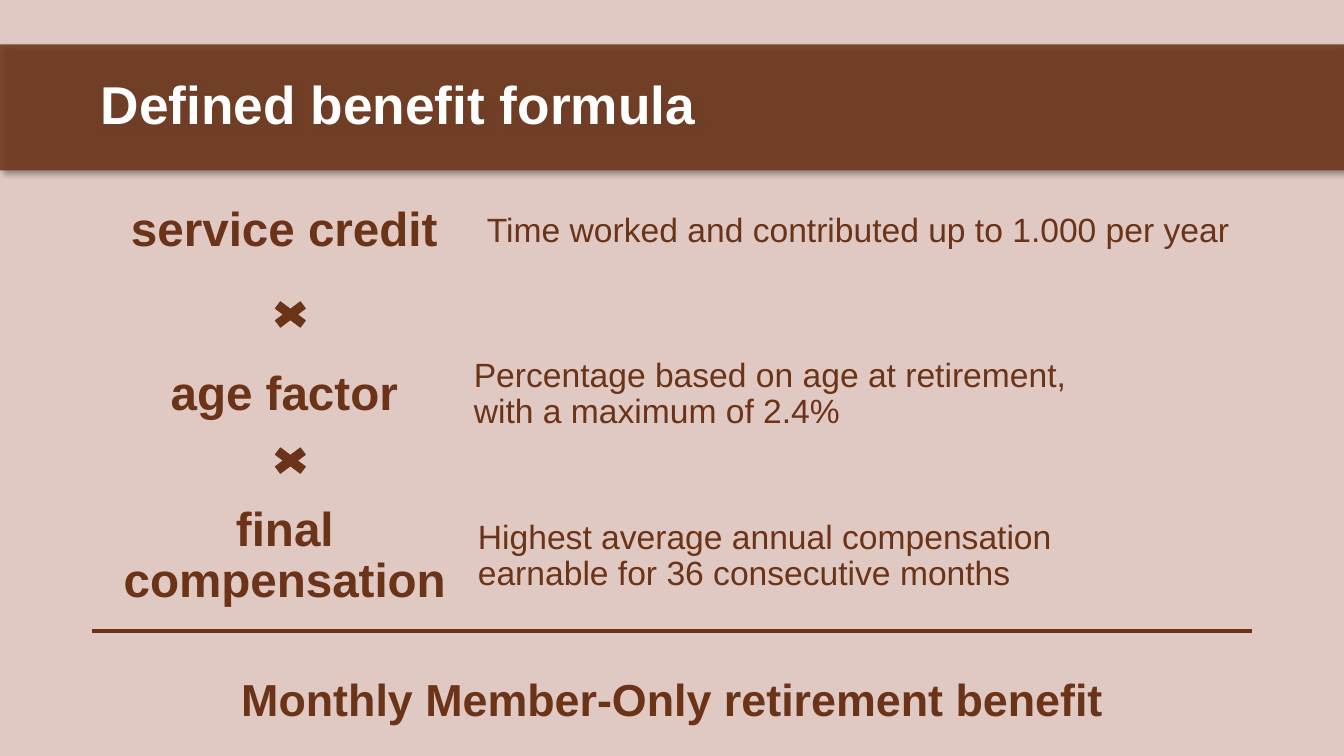
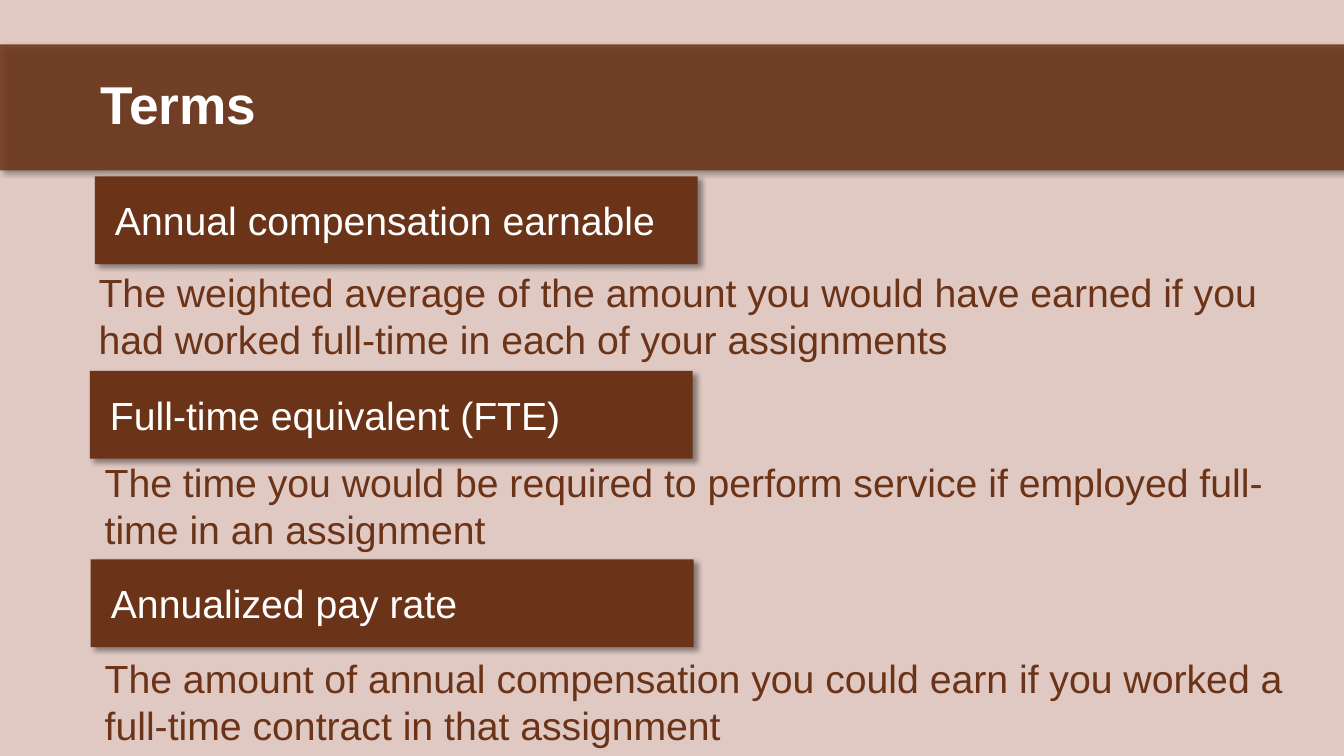
from lxml.etree import SubElement
from pptx import Presentation
from pptx.dml.color import RGBColor
from pptx.enum.shapes import MSO_CONNECTOR, MSO_SHAPE
from pptx.enum.text import MSO_ANCHOR, PP_ALIGN
from pptx.oxml.ns import qn
from pptx.util import Inches, Pt

BROWN = RGBColor(0x6B, 0x33, 0x17)
ROSE = RGBColor(0xE0, 0xC9, 0xC3)
WHITE = RGBColor(0xFF, 0xFF, 0xFF)
FONT = "Arial"
SLIDE_W, SLIDE_H = 13.33, 7.5
BAND = (0, 0.44, SLIDE_W, 1.25)
TERM_INS = (0.2, 0.05, 0.1, 0.05)
FACTOR_INS = (0.14, 0.1, 0.14, 0.1)
MEANING_INS = (0.27, 0.19, 0.32, 0.19)

FACTORS = [
    ("service credit", (1.08, 1.62, 3.48, 1.35),
     "Time worked and contributed up to 1.000 per year", (4.56, 1.76, 8.41, 1.07)),
    ("age factor", (1.08, 3.24, 3.48, 1.35),
     "Percentage based on age at retirement, with a maximum of 2.4%", (4.43, 3.38, 6.96, 1.07)),
    ("final compensation", (1.08, 4.85, 3.49, 1.34),
     "Highest average annual compensation earnable for 36 consecutive months",
     (4.47, 4.93, 7.66, 1.18)),
]
TERMS = [
    ("Annual compensation earnable", (0.94, 1.75),
     "The weighted average of the amount you would have earned if you had worked "
     "full-time in each of your assignments", (0.88, 2.63)),
    ("Full-time equivalent (FTE)", (0.89, 3.68),
     "The time you would be required to perform service if employed full-time "
     "in an assignment", (0.94, 4.51)),
    ("Annualized pay rate", (0.9, 5.55),
     "The amount of annual compensation you could earn if you worked a "
     "full-time contract in that assignment", (0.94, 6.46)),
]


def inches(box):
    """Turn a box of plain numbers into lengths."""
    return [Inches(v) for v in box]


def set_text(sp, text, size, color=BROWN, bold=False, align=PP_ALIGN.LEFT,
             ins=(0.1, 0.05, 0.1, 0.05), spacing=1.0):
    """Write one vertically centred paragraph into a shape."""
    tf = sp.text_frame
    tf.word_wrap = True
    tf.vertical_anchor = MSO_ANCHOR.MIDDLE
    tf.margin_left, tf.margin_top, tf.margin_right, tf.margin_bottom = inches(ins)
    tf.text = text
    p = tf.paragraphs[0]
    p.alignment = align
    p.line_spacing = spacing
    font = p.runs[0].font
    font.name, font.size, font.bold = FONT, Pt(size), bold
    font.color.rgb = color


def add_label(s, box, text, size, **style):
    """Add a text box."""
    set_text(s.shapes.add_textbox(*inches(box)), text, size, **style)


def add_bar(s, box, text, size, alpha=100, **style):
    """Add a brown bar with white text and a soft shadow."""
    sp = s.shapes.add_shape(MSO_SHAPE.RECTANGLE, *inches(box))
    sp.fill.solid()
    sp.fill.fore_color.rgb = BROWN
    sp.line.fill.background()
    sp.shadow.inherit = False
    spPr = sp.fill._xPr
    if alpha < 100:
        color = spPr.find(qn("a:solidFill")).find(qn("a:srgbClr"))
        SubElement(color, qn("a:alpha"), val=str(alpha * 1000))
    shadow = SubElement(spPr.find(qn("a:effectLst")), qn("a:outerShdw"),
                        blurRad=str(Pt(4)), dist=str(Pt(3)), dir="2700000",
                        algn="tl", rotWithShape="0")
    black = SubElement(shadow, qn("a:srgbClr"), val="000000")
    SubElement(black, qn("a:alpha"), val="40000")
    set_text(sp, text, size, color=WHITE, **style)


def add_slide(prs, title):
    """Add a slide with the shared background and title band."""
    s = prs.slides.add_slide(prs.slide_layouts[6])
    s.background.fill.solid()
    s.background.fill.fore_color.rgb = ROSE
    add_bar(s, BAND, title, 38, alpha=85, bold=True, ins=(1, 0.05, 0.1, 0.05), spacing=0.9)
    return s


def add_times_sign(s, box):
    """Add a multiplication sign between two factors."""
    sp = s.shapes.add_shape(MSO_SHAPE.MATH_MULTIPLY, *inches(box))
    sp.fill.solid()
    sp.fill.fore_color.rgb = BROWN
    sp.line.color.rgb = BROWN
    sp.line.width = Pt(0.5)
    sp.shadow.inherit = False


def add_rule(s, left, right, y):
    """Add the horizontal line above the result."""
    line = s.shapes.add_connector(MSO_CONNECTOR.STRAIGHT, *inches((left, y, right, y)))
    line.line.color.rgb = BROWN
    line.line.width = Pt(3)
    SubElement(line._element.spPr, qn("a:effectLst"))


def formula_slide(prs):
    """Build the slide that multiplies three factors."""
    s = add_slide(prs, "Defined benefit formula")
    for factor, factor_box, meaning, meaning_box in FACTORS:
        add_label(s, factor_box, factor, 34, bold=True, align=PP_ALIGN.CENTER,
                  ins=FACTOR_INS, spacing=0.9)
        add_label(s, meaning_box, meaning, 24, ins=MEANING_INS, spacing=0.9)
    for top in (2.94, 4.39):
        add_times_sign(s, (2.64, top, 0.48, 0.36))
    add_rule(s, 0.91, 12.42, 6.26)
    add_label(s, (1.44, 6.51, 10.46, 0.9), "Monthly Member-Only retirement benefit", 32,
              bold=True, align=PP_ALIGN.CENTER, ins=(0.08, 0.04, 0.08, 0.04), spacing=0.9)


def terms_slide(prs):
    """Build the slide that explains three terms."""
    s = add_slide(prs, "Terms")
    for term, term_at, meaning, meaning_at in TERMS:
        add_label(s, (*meaning_at, 11.96, 1), meaning, 28)
        add_bar(s, (*term_at, 5.98, 0.87), term, 28, ins=TERM_INS)


def main():
    """Build and save the presentation."""
    prs = Presentation()
    prs.slide_width, prs.slide_height = Inches(SLIDE_W), Inches(SLIDE_H)
    formula_slide(prs)
    terms_slide(prs)
    prs.save("out.pptx")


if __name__ == "__main__":
    main()
